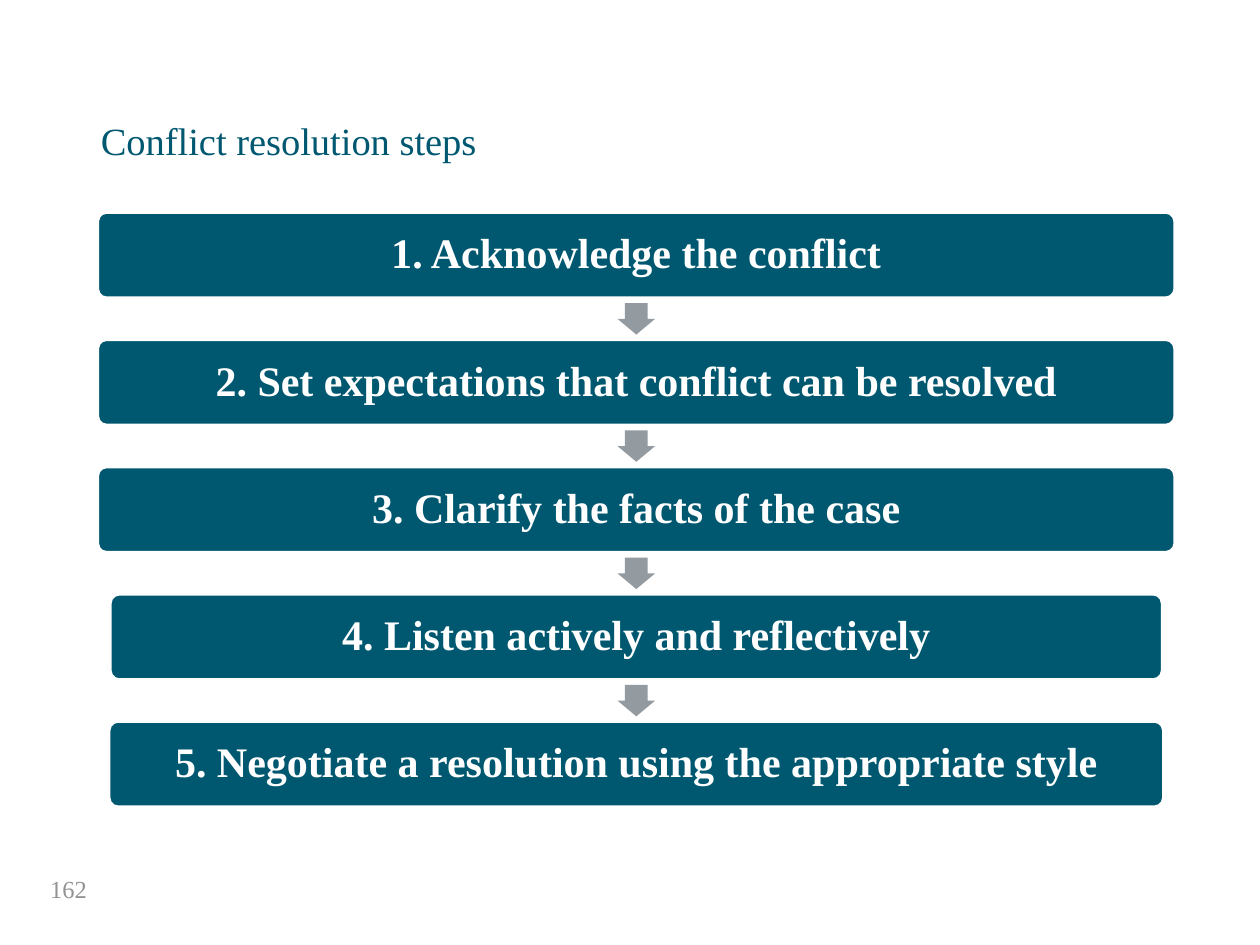
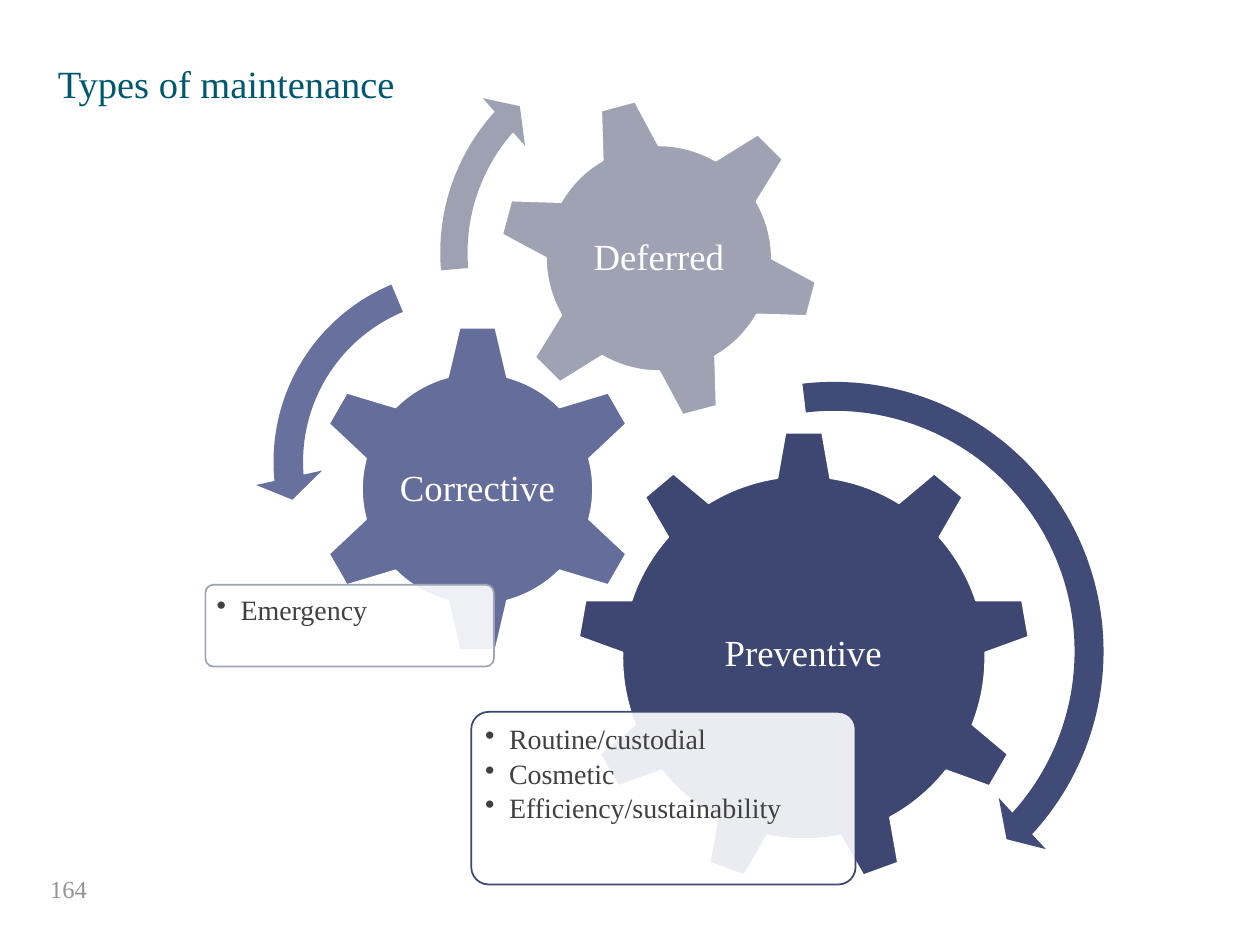
from dataclasses import dataclass
from lxml.etree import SubElement
from pptx import Presentation
from pptx.dml.color import RGBColor
from pptx.enum.shapes import MSO_SHAPE as Kind
from pptx.enum.text import MSO_ANCHOR as Anchor, MSO_AUTO_SIZE as Fit, PP_ALIGN as Align
from pptx.oxml.ns import qn
from pptx.util import Inches, Pt


@dataclass(frozen=True)
class Theme:
    font: str = "Times New Roman"
    teal: str = "005870"
    white: str = "FFFFFF"
    arrow: str = "939BA1"
    page: str = "939393"
    ink: str = "414042"
    navy: str = "3D4772"
    blue: str = "656E9B"
    grey: str = "9FA2B3"
    title: int = 22
    step: int = 24
    gear: int = 21
    item: int = 16
    note: int = 14


look = Theme()
wide, high = Inches(10), Inches(7.5)
unit = wide / 100

steps = [
    ("1. Acknowledge the conflict", 85.4),
    ("2. Set expectations that conflict can be resolved", 85.4),
    ("3. Clarify the facts of the case", 85.4),
    ("4. Listen actively and reflectively", 83.4),
    ("5. Negotiate a resolution using the appropriate style", 83.6),
]

gears = [
    dict(name="Preventive", kind=Kind.GEAR_9, at=(45.8, 34.2, 36, 36), turn=0,
         fill=look.navy, label=(53, 42.7, 21.5, 18.5), card=(37.4, 56.5, 30.5, 13.7),
         edge=look.navy, items=["Routine/custodial", "Cosmetic", "Efficiency/sustainability"]),
    dict(name="Corrective", kind=Kind.GEAR_6, at=(24.8, 25.7, 26.2, 26.2), turn=0,
         fill=look.blue, label=(31.4, 32.4, 13, 12.9), card=(16.3, 46.4, 22.9, 6.5),
         edge=look.grey, items=["Emergency"]),
    dict(name="Deferred", kind=Kind.GEAR_6, at=(39.5, 7.7, 25.6, 25.6), turn=345,
         fill=look.grey, label=(45.1, 13.3, 14.4, 14.4), items=[]),
]

sweeps = [
    (Kind.CIRCULAR_ARROW, (43.2, 28.7, 46, 46), "404B78", (0.05, 2.99, 25.47, 157.96, 0.06)),
    (Kind.LEFT_CIRCULAR_ARROW, (20.2, 19.9, 33.5, 33.5), "68709D",
     (0.07, 4.3, 104.89, 148.38, 0.08)),
    (Kind.CIRCULAR_ARROW, (33.5, 2, 36.1, 36.1), "9EA1B2", (0.06, 3.94, 133.14, 105.08, 0.07)),
]


def place(at):
    return [round(part * unit) for part in at]


def write(shape, lines, size, color, bold=False, align=Align.LEFT, anchor=Anchor.TOP,
          inset=(1, 0.5), lead=None, after=0, bullet=False):
    frame = shape.text_frame
    frame.word_wrap = True
    frame.auto_size = Fit.NONE
    frame.vertical_anchor = anchor
    side, top = place(inset)
    frame.margin_left = frame.margin_right = side
    frame.margin_top = frame.margin_bottom = top
    frame.text = "\n".join(lines)
    for para in frame.paragraphs:
        if bullet:
            props = para._p.get_or_add_pPr()
            hang = round(1.9 * unit)
            props.set("marL", str(hang))
            props.set("indent", str(-hang))
            SubElement(props, qn("a:buChar")).set("char", "•")
        para.alignment = align
        para.space_before = Pt(0)
        para.space_after = Pt(after * size)
        if lead:
            para.line_spacing = lead
        for run in para.runs:
            run.font.name = look.font
            run.font.size = Pt(size)
            run.font.bold = bold
            run.font.color.rgb = RGBColor.from_string(color)


def draw(slide, kind, at, fill, edge=None, adjust=(), turn=0, alpha=None):
    shape = slide.shapes.add_shape(kind, *place(at))
    shape.shadow.inherit = False
    shape.rotation = turn
    shape.fill.solid()
    shape.fill.fore_color.rgb = RGBColor.from_string(fill)
    if alpha:
        tint = shape.fill._xPr.find(".//" + qn("a:srgbClr"))
        SubElement(tint, qn("a:alpha")).set("val", str(alpha * 1000))
    if edge:
        shape.line.color.rgb = RGBColor.from_string(edge)
        shape.line.width = Pt(1)
    else:
        shape.line.fill.background()
    for spot, value in enumerate(adjust):
        shape.adjustments[spot] = value
    return shape


def box(slide, at, lines, size, color, **style):
    write(slide.shapes.add_textbox(*place(at)), lines, size, color, **style)


def start(deck, title, at, page, **style):
    slide = deck.slides.add_slide(deck.slide_layouts[5])
    head = slide.shapes.title
    head.left, head.top, head.width, head.height = place(at)
    write(head, [title], look.title, look.teal, **style)
    box(slide, (3, 68.5, 22.5, 4), [page], look.note, look.page, anchor=Anchor.MIDDLE)
    return slide


def flow(deck):
    slide = start(deck, "Conflict resolution steps", (7, 9.2, 96.1, 3.3), "162", lead=0.9)
    mid, top, pitch, tall = 50.5, 16.9, 10.1, 6.7
    for row, (text, span) in enumerate(steps):
        y = top + row * pitch
        bar = draw(slide, Kind.ROUNDED_RECTANGLE, (mid - span / 2, y, span, tall),
                   look.teal, look.white, adjust=[0.1])
        write(bar, [text], look.step, look.white, bold=True, align=Align.CENTER,
              anchor=Anchor.MIDDLE, inset=(1, 1), lead=0.9)
        if row < len(steps) - 1:
            draw(slide, Kind.RIGHT_ARROW, (mid - 1.25, y + tall + 0.2, 2.5, 3),
                 look.arrow, adjust=(0.6, 0.5), turn=90)


def cogs(deck):
    slide = start(deck, "Types of maintenance", (4.6, 4.8, 42.6, 4.6), "164", inset=(0, 0))
    for gear in gears:
        draw(slide, gear["kind"], gear["at"], gear["fill"], look.white, turn=gear["turn"])
        box(slide, gear["label"], [gear["name"]], look.gear, look.white, align=Align.CENTER,
            anchor=Anchor.MIDDLE, inset=(0.3, 0.3), lead=0.9)
        if gear["items"]:
            card = draw(slide, Kind.ROUNDED_RECTANGLE, gear["card"], look.white,
                        gear["edge"], adjust=[0.1], alpha=90)
            write(card, gear["items"], look.item, look.ink, inset=(0.7, 0.7),
                  lead=0.9, after=0.15, bullet=True)
    for kind, at, fill, adjust in sweeps:
        draw(slide, kind, at, fill, adjust=adjust)


def main():
    deck = Presentation()
    deck.slide_width, deck.slide_height = wide, high
    flow(deck)
    cogs(deck)
    deck.save("out.pptx")


if __name__ == "__main__":
    main()
